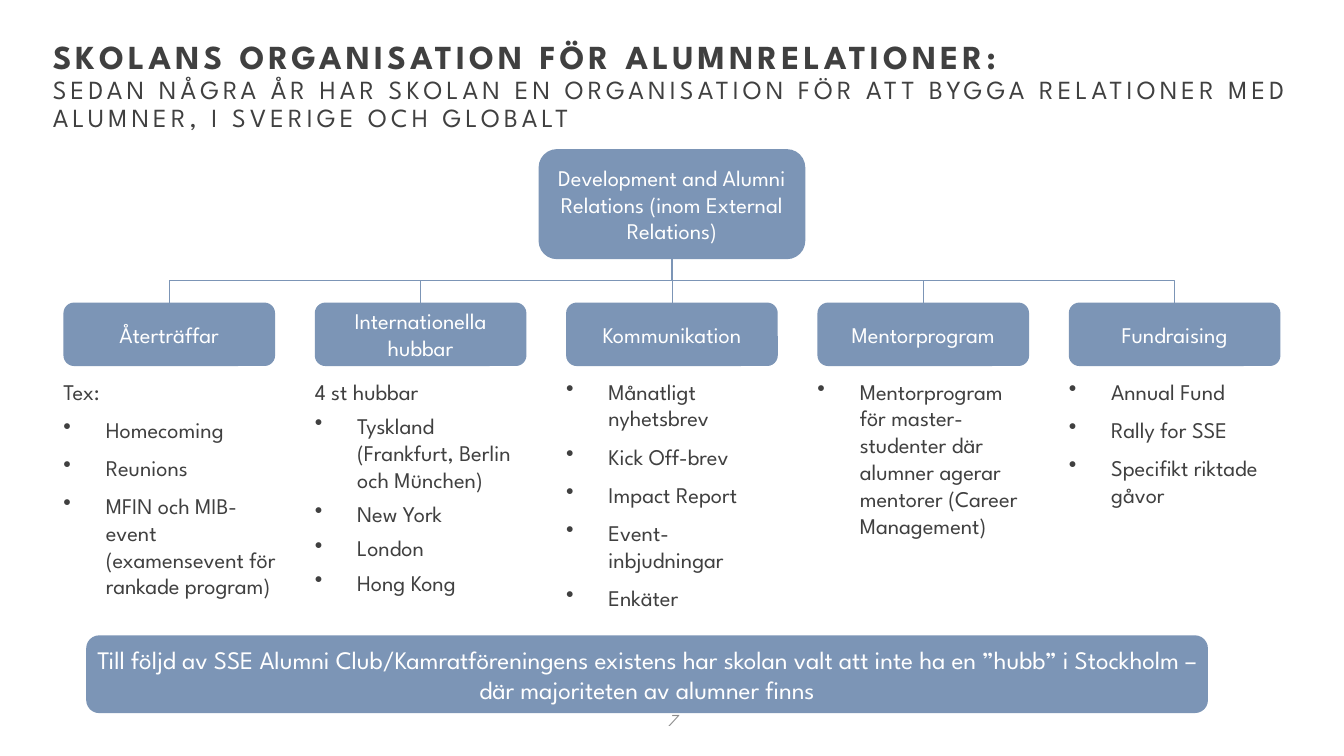
"""Builds the slide on the school's organisation for alumni relations."""
from dataclasses import dataclass

from lxml import etree
from pptx import Presentation
from pptx import util as u
from pptx.dml.color import RGBColor
from pptx.enum import shapes, text
from pptx.oxml import ns


@dataclass(frozen=True)
class Theme:
    font: str = "League Spartan"
    ink: str = "404040"
    accent: str = "7C95B6"
    white: str = "FFFFFF"
    muted: str = "8C8C8C"
    heading: float = 18
    subheading: float = 14
    banner: float = 13.5
    body: float = 12
    footer: float = 9


class SlideBuilder:
    def __init__(self, slide, theme):
        self.slide = slide
        self.theme = theme

    def style(self, paragraph, size, color):
        font = paragraph.font
        font.name = self.theme.font
        font.color.rgb = RGBColor.from_string(color)
        if size:
            font.size = u.Pt(size)

    def text_box(self, left, top, width, height):
        shape = self.slide.shapes.add_textbox(u.Cm(left), u.Cm(top), u.Cm(width), u.Cm(height))
        frame = shape.text_frame
        frame.word_wrap = True
        frame.margin_left = frame.margin_right = frame.margin_top = frame.margin_bottom = 0
        return frame

    def title(self, left, top, width, height, heading, subheading):
        paragraph = self.text_box(left, top, width, height).paragraphs[0]
        paragraph.line_spacing = 0.9
        self.style(paragraph, None, self.theme.ink)
        lines = [(heading, self.theme.heading, True), (subheading, self.theme.subheading, False)]
        for index, (words, size, bold) in enumerate(lines):
            if index:
                paragraph.add_line_break()
            run = paragraph.add_run()
            run.text = words
            run.font.size = u.Pt(size)
            run.font.bold = bold
            run.font._element.set("spc", "220")

    def page_number(self, left, top, width, height, number):
        frame = self.text_box(left, top, width, height)
        frame.vertical_anchor = text.MSO_ANCHOR.MIDDLE
        paragraph = frame.paragraphs[0]
        paragraph.text = number
        paragraph.alignment = text.PP_ALIGN.CENTER
        self.style(paragraph, self.theme.footer, self.theme.muted)
        paragraph.font.italic = True

    def card(self, left, top, width, height, words, size, side_margin=0.25):
        shape = self.slide.shapes.add_shape(
            shapes.MSO_SHAPE.ROUNDED_RECTANGLE, u.Cm(left), u.Cm(top), u.Cm(width), u.Cm(height))
        shape.shadow.inherit = False
        shape.fill.solid()
        shape.fill.fore_color.rgb = RGBColor.from_string(self.theme.accent)
        shape.line.fill.background()
        frame = shape.text_frame
        frame.word_wrap = True
        frame.margin_left = frame.margin_right = u.Cm(side_margin)
        frame.vertical_anchor = text.MSO_ANCHOR.MIDDLE
        paragraph = frame.paragraphs[0]
        paragraph.text = words
        paragraph.alignment = text.PP_ALIGN.CENTER
        self.style(paragraph, size, self.theme.white)

    def branch(self, start_x, start_y, end_x, end_y):
        """Joins a parent to a child below it, bending halfway down."""
        shift = end_x - start_x
        kind = shapes.MSO_CONNECTOR.STRAIGHT
        points = (start_x, start_y, end_x, end_y)
        rotation = 0
        if shift:
            kind = shapes.MSO_CONNECTOR.ELBOW
            middle_x, middle_y = (start_x + end_x) / 2, (start_y + end_y) / 2
            half_drop = (end_y - start_y) / 2 * (1 if shift > 0 else -1)
            half_shift = abs(shift) / 2
            points = (middle_x + half_drop, middle_y - half_shift,
                      middle_x - half_drop, middle_y + half_shift)
            rotation = 270 if shift > 0 else 90
        connector = self.slide.shapes.add_connector(kind, *map(u.Cm, points))
        connector.rotation = rotation
        connector.line.color.rgb = RGBColor.from_string(self.theme.accent)
        connector.line.width = u.Pt(0.5)
        etree.SubElement(connector._element.spPr, ns.qn("a:effectLst"))

    def bullet_list(self, left, top, width, height, intro, items, gap):
        frame = self.text_box(left, top, width, height)
        lines = [(intro, False)] if intro else []
        lines += [(item, True) for item in items]
        for index, (words, bulleted) in enumerate(lines):
            paragraph = frame.add_paragraph() if index else frame.paragraphs[0]
            paragraph.text = words
            if bulleted:
                properties = paragraph._p.get_or_add_pPr()
                indent = u.Cm(0.8)
                properties.set("marL", str(indent))
                properties.set("indent", str(-indent))
                etree.SubElement(properties, ns.qn("a:buChar"), char="•")
            if index:
                paragraph.space_before = u.Pt(gap)
            self.style(paragraph, self.theme.body, self.theme.ink)


COLUMNS = [
    ("Återträffar", "Tex:",
     ["Homecoming", "Reunions", "MFIN och MIB-event (examensevent för rankade program)"],
     4.2, 3.86, 6),
    ("Internationella hubbar", "4 st hubbar",
     ["Tyskland (Frankfurt, Berlin och München)", "New York", "London", "Hong Kong"],
     4, 4.93, 4),
    ("Kommunikation", None,
     ["Månatligt nyhetsbrev", "Kick Off-brev", "Impact Report", "Event-inbjudningar", "Enkäter"],
     4, 4.45, 6),
    ("Mentorprogram", None,
     ["Mentorprogram för master-studenter där alumner agerar mentorer (Career Management)"],
     4.08, 2.64, 6),
    ("Fundraising", None,
     ["Annual Fund", "Rally for SSE", "Specifikt riktade gåvor"],
     4, 2.64, 6),
]


def main():
    presentation = Presentation()
    presentation.slide_width = u.Cm(25.4)
    presentation.slide_height = u.Cm(14.29)
    slide = presentation.slides.add_slide(presentation.slide_layouts[6])
    theme = Theme()
    builder = SlideBuilder(slide, theme)

    builder.title(
        1, 0.76, 23.42, 1.47, "SKOLANS ORGANISATION FÖR ALUMNRELATIONER:",
        "SEDAN NÅGRA ÅR HAR SKOLAN EN ORGANISATION FÖR ATT BYGGA RELATIONER "
        "MED ALUMNER, I SVERIGE OCH GLOBALT")
    builder.page_number(11.95, 13.23, 1.5, 0.76, "7")
    builder.card(
        1.63, 12.01, 21.2, 1.47,
        "Till följd av SSE Alumni Club/Kamratföreningens existens har skolan valt att inte ha "
        "en ”hubb” i Stockholm – där majoriteten av alumner finns", theme.banner, 0.1)

    center, root_top, root_width, root_height = 12.7, 2.82, 5.04, 2.08
    builder.card(center - root_width / 2, root_top, root_width, root_height,
                 "Development and Alumni Relations (inom External Relations)", theme.body)

    first_left, pitch, card_top, card_width = 1.2, 4.75, 5.72, 4
    for index, (name, intro, items, width, height, gap) in enumerate(COLUMNS):
        left = first_left + index * pitch
        builder.card(left, card_top, card_width, 1.2, name, theme.body)
        builder.branch(center, root_top + root_height, left + card_width / 2, card_top)
        builder.bullet_list(left, 7.14, width, height, intro, items, gap)

    presentation.save("out.pptx")


if __name__ == "__main__":
    main()
